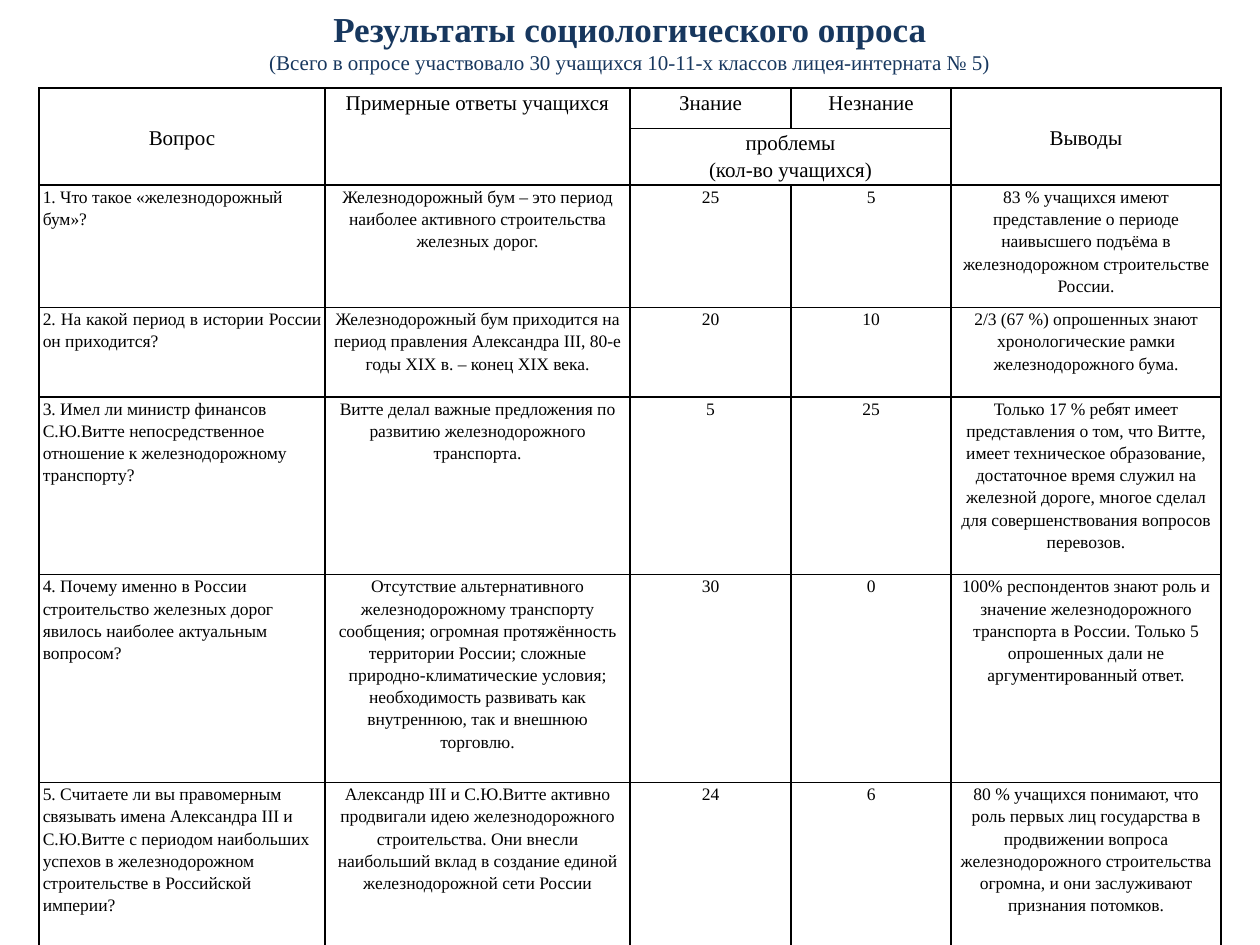
from dataclasses import dataclass

from lxml.etree import SubElement
from pptx import Presentation
from pptx.dml.color import RGBColor
from pptx.enum.text import MSO_ANCHOR as Anchor, PP_ALIGN as Align
from pptx.oxml.ns import qn
from pptx.util import Inches, Pt


@dataclass(frozen=True)
class Theme:
    """Colours, font and type sizes of the slide."""
    font: str = "Times New Roman"
    heading: RGBColor = RGBColor(0x17, 0x37, 0x5E)
    ink: RGBColor = RGBColor(0, 0, 0)
    title_size: Pt = Pt(20)
    header_size: Pt = Pt(12)
    body_size: Pt = Pt(10)
    border: Pt = Pt(1)
    line_spacing: float = 1.15


THEME = Theme()
TITLE = "Результаты социологического опроса"
SUBTITLE = "(Всего в опросе участвовало 30 учащихся 10-11-х классов лицея-интерната № 5)"
COLUMN_WIDTHS = [2.27, 2.42, 1.28, 1.27, 2.14]
ROW_HEIGHTS = [0.32, 0.45, 0.97, 0.71, 1.41, 1.65, 1.3]
HEADERS = ["Вопрос", "Примерные ответы учащихся", "Знание", "Незнание", "Выводы"]
SUBHEADER = "проблемы\n(кол-во учащихся)"
ANSWERS = [
    ("1. Что такое «железнодорожный бум»?",
     "Железнодорожный бум – это период наиболее активного строительства железных дорог.",
     "25", "5",
     "83 % учащихся имеют представление о периоде наивысшего подъёма в "
     "железнодорожном строительстве России."),
    ("2. На какой период в истории России он приходится?",
     "Железнодорожный бум приходится на период правления Александра III, "
     "80-е годы XIX в. – конец XIX века.",
     "20", "10",
     "2/3 (67 %) опрошенных знают хронологические рамки железнодорожного бума."),
    ("3. Имел ли министр финансов С.Ю.Витте непосредственное отношение к "
     "железнодорожному транспорту?",
     "Витте делал важные предложения по развитию железнодорожного транспорта.",
     "5", "25",
     "Только 17 % ребят имеет представления о том, что Витте, имеет техническое "
     "образование, достаточное время служил на железной дороге, многое сделал для "
     "совершенствования вопросов перевозов."),
    ("4. Почему именно в России строительство железных дорог явилось наиболее "
     "актуальным вопросом?",
     "Отсутствие альтернативного железнодорожному транспорту сообщения; огромная "
     "протяжённость территории России; сложные природно-климатические условия; "
     "необходимость развивать как внутреннюю, так и внешнюю торговлю.",
     "30", "0",
     "100% респондентов знают роль и значение железнодорожного транспорта в России. "
     "Только 5 опрошенных дали не аргументированный ответ."),
    ("5. Считаете ли вы правомерным связывать имена Александра III и С.Ю.Витте с "
     "периодом наибольших успехов в железнодорожном строительстве в Российской империи?",
     "Александр III и С.Ю.Витте активно продвигали идею железнодорожного "
     "строительства. Они внесли наибольший вклад в создание единой железнодорожной "
     "сети России",
     "24", "6",
     "80 % учащихся понимают, что роль первых лиц государства в продвижении вопроса "
     "железнодорожного строительства огромна, и они заслуживают признания потомков."),
]


def style_paragraph(paragraph, size, color, align=Align.CENTER, bold=False):
    """Set the font and alignment of one paragraph."""
    paragraph.alignment = align
    font = paragraph.font
    font.name, font.size, font.bold = THEME.font, size, bold
    font.color.rgb = color


def add_heading(slide, left, top, width, height):
    """Place the title and subtitle in the upper part of the box."""
    frame = slide.shapes.add_textbox(left, top, width, height).text_frame
    frame.word_wrap = True
    frame.vertical_anchor = Anchor.MIDDLE
    frame.margin_bottom = Inches(0.33)
    frame.text = f"{TITLE}\n{SUBTITLE}"
    title, subtitle = frame.paragraphs
    style_paragraph(title, THEME.title_size, THEME.heading, bold=True)
    style_paragraph(subtitle, THEME.header_size, THEME.heading)


def format_cell(cell):
    """Give a cell its insets, borders and empty fill."""
    cell.margin_left = cell.margin_right = Inches(0.03)
    cell.margin_top = cell.margin_bottom = 0
    properties = cell._tc.get_or_add_tcPr()
    for side in ("a:lnL", "a:lnR", "a:lnT", "a:lnB"):
        line = SubElement(properties, qn(side), w=str(THEME.border))
        fill = SubElement(line, qn("a:solidFill"))
        SubElement(fill, qn("a:srgbClr"), val=str(THEME.ink))
    cell.fill.background()


def write_cell(cell, text, size, align=Align.CENTER):
    """Write text into a cell in the table style."""
    cell.text = text
    for paragraph in cell.text_frame.paragraphs:
        style_paragraph(paragraph, size, THEME.ink, align)
        paragraph.line_spacing = THEME.line_spacing


def add_survey_table(slide, left, top, width, height):
    """Place the survey table with its two-row header."""
    table = slide.shapes.add_table(
        len(ROW_HEIGHTS), len(COLUMN_WIDTHS), left, top, width, height).table
    table.first_row = table.horz_banding = False
    for column, size in zip(table.columns, COLUMN_WIDTHS):
        column.width = Inches(size)
    for row, size in zip(table.rows, ROW_HEIGHTS):
        row.height = Inches(size)
    for cell in table.iter_cells():
        format_cell(cell)
    for index in (0, 1, 4):
        table.cell(0, index).merge(table.cell(1, index))
    table.cell(1, 2).merge(table.cell(1, 3))
    for index, text in enumerate(HEADERS):
        write_cell(table.cell(0, index), text, THEME.header_size)
    for index in (0, 4):
        table.cell(0, index).vertical_anchor = Anchor.MIDDLE
    write_cell(table.cell(1, 2), SUBHEADER, THEME.header_size)
    for row_index, answers in enumerate(ANSWERS, start=2):
        for index, text in enumerate(answers):
            align = Align.CENTER if index else Align.LEFT
            write_cell(table.cell(row_index, index), text, THEME.body_size, align)
    table.cell(3, 0).text_frame.paragraphs[0].alignment = Align.JUSTIFY


def main():
    """Build and save the survey slide."""
    presentation = Presentation()
    presentation.slide_width, presentation.slide_height = Inches(10), Inches(7.5)
    slide = presentation.slides.add_slide(presentation.slide_layouts[6])
    add_survey_table(slide, Inches(0.31), Inches(0.7),
                     Inches(sum(COLUMN_WIDTHS)), Inches(sum(ROW_HEIGHTS)))
    add_heading(slide, 0, 0, presentation.slide_width, Inches(0.94))
    presentation.save("out.pptx")


if __name__ == "__main__":
    main()
